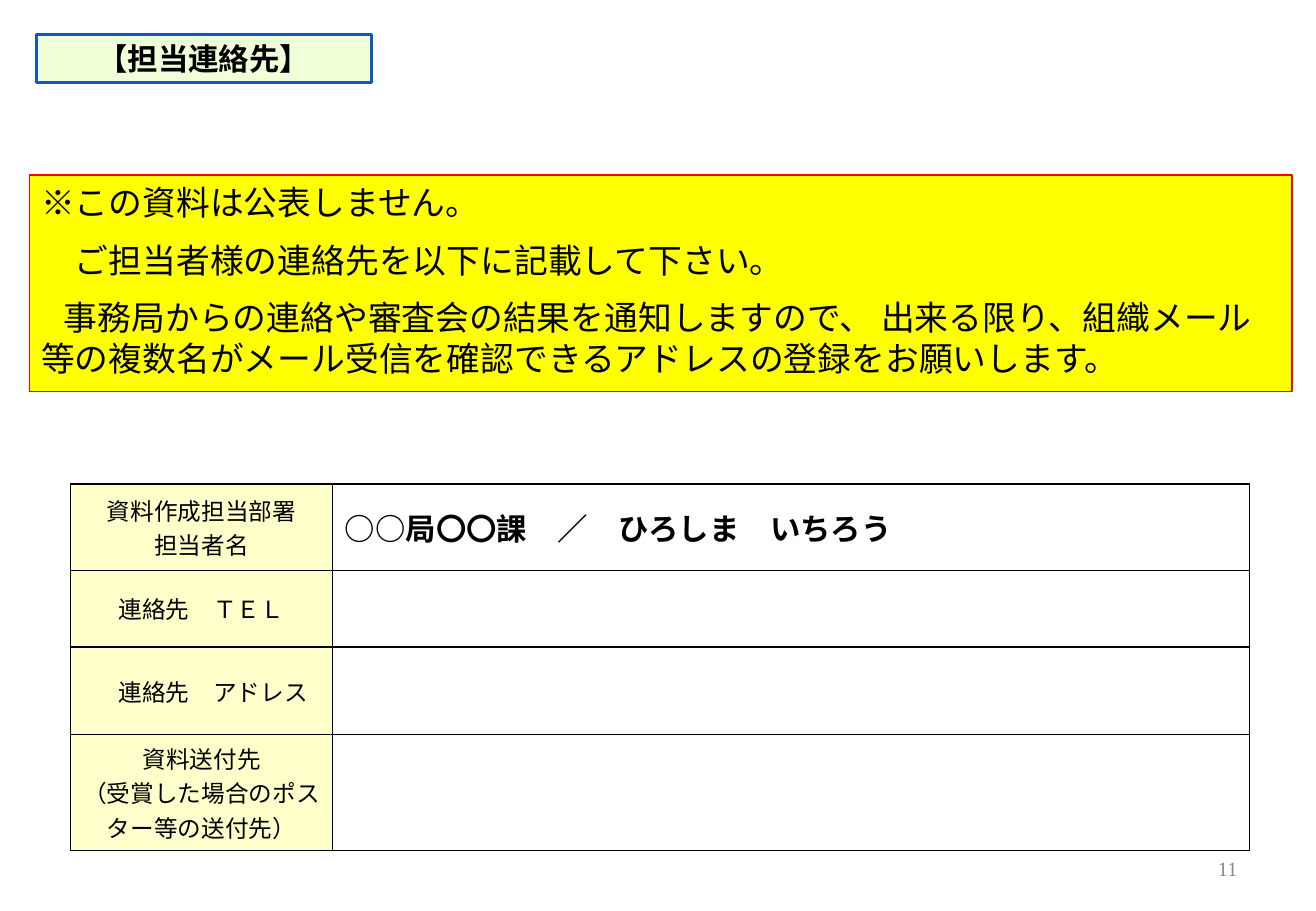
from lxml import etree
from pptx import Presentation
from pptx.dml.color import RGBColor
from pptx.enum.shapes import MSO_SHAPE as SHAPE
from pptx.enum.text import MSO_ANCHOR as ANCHOR, PP_ALIGN as ALIGN
from pptx.oxml import parse_xml
from pptx.oxml.ns import nsdecls, qn
from pptx.util import Pt

CJK, SERIF, LATO = "Noto Sans CJK JP", "Times New Roman", "Lato"
BLACK = "000000"


def color(hex_code):
    return RGBColor.from_string(hex_code)


def add_run(p, text, size, font, rgb=BLACK, bold=False):
    r = p.add_run()
    r.text = text
    f = r.font
    f.size, f.name, f.bold = Pt(size), font, bold
    f.color.rgb = color(rgb)
    ea = etree.SubElement(r._r.get_or_add_rPr(), qn("a:ea"))
    ea.set("typeface", CJK)


def place(sp, box):
    sp.left, sp.top, sp.width, sp.height = (Pt(v) for v in box)


def paint(sp, fill, line, width):
    sp.fill.solid()
    sp.fill.fore_color.rgb = color(fill)
    sp.line.color.rgb = color(line)
    sp.line.width = Pt(width)


def paragraphs(tf, count):
    return [tf.paragraphs[0]] + [tf.add_paragraph() for _ in range(count - 1)]


def add_heading(slide, box):
    """Title placeholder as a rounded label."""
    sp = slide.shapes.title
    place(sp, box)
    sp._element.spPr.find(qn("a:xfrm")).addnext(parse_xml(
        f'<a:prstGeom {nsdecls("a")} prst="roundRect"><a:avLst>'
        '<a:gd name="adj" fmla="val 30800"/></a:avLst></a:prstGeom>'))
    paint(sp, "F0FFD7", "0E58C4", 1.75)
    tf = sp.text_frame
    tf.vertical_anchor = ANCHOR.MIDDLE
    tf.margin_top = tf.margin_bottom = 0
    p = tf.paragraphs[0]
    p.alignment, p.line_spacing = ALIGN.CENTER, 1.0
    add_run(p, "【担当連絡先】", 18, "Arial", bold=True)


def add_notice(slide, box):
    """Yellow notice: (text, font, first-line indent) per paragraph."""
    lines = [
        ("※この資料は公表しません。", CJK, 0),
        ("　ご担当者様の連絡先を以下に記載して下さい。", CJK, 0),
        ("事務局からの連絡や審査会の結果を通知しますので、 出来る限り、組織メール"
         "等の複数名がメール受信を確認できるアドレスの登録をお願いします。", LATO, 13.5),
    ]
    sp = slide.shapes.add_shape(SHAPE.RECTANGLE, *(Pt(v) for v in box))
    sp.shadow.inherit = False
    paint(sp, "FFFF00", "FF0000", 0.75)
    tf = sp.text_frame
    tf.word_wrap = True
    tf.vertical_anchor = ANCHOR.TOP
    for p, (text, font, indent) in zip(paragraphs(tf, len(lines)), lines):
        p.alignment = ALIGN.LEFT
        p.line_spacing, p.space_after = Pt(24.3), Pt(10)
        p._p.get_or_add_pPr().set("indent", str(Pt(indent)))
        add_run(p, text, 20, font)


def add_borders(cell):
    tcPr = cell._tc.get_or_add_tcPr()
    for i, side in enumerate("LRTB"):
        tcPr.insert(i, parse_xml(
            f'<a:ln{side} {nsdecls("a")} w="{Pt(1)}"><a:solidFill>'
            f'<a:srgbClr val="{BLACK}"/></a:solidFill></a:ln{side}>'))


def add_contact_table(slide, box):
    """Contact form: labels on the left, entries on the right."""
    rows = [
        (51, ["資料作成担当部署", "担当者名"], SERIF, "○○局〇〇課　／　ひろしま　いちろう"),
        (45.5, ["連絡先　ＴＥＬ"], LATO, ""),
        (52, ["　連絡先　アドレス"], SERIF, ""),
        (68.5, ["資料送付先", "（受賞した場合のポスター等の送付先）"], SERIF, ""),
    ]
    label_width = 155.5
    left, top, width = box
    height = sum(row[0] for row in rows)
    tbl = slide.shapes.add_table(len(rows), 2, Pt(left), Pt(top), Pt(width), Pt(height)).table
    tbl.first_row = tbl.horz_banding = False
    tbl.columns[0].width = Pt(label_width)
    tbl.columns[1].width = Pt(width - label_width)
    for i, (row_height, labels, font, entry) in enumerate(rows):
        tbl.rows[i].height = Pt(row_height)
        label, value = tbl.cell(i, 0), tbl.cell(i, 1)
        for cell, fill in ((label, "FFFFCC"), (value, "FFFFFF")):
            cell.fill.solid()
            cell.fill.fore_color.rgb = color(fill)
            cell.vertical_anchor = ANCHOR.MIDDLE
            add_borders(cell)
        for p, text in zip(paragraphs(label.text_frame, len(labels)), labels):
            p.alignment = ALIGN.CENTER
            add_run(p, text, 14, font)
        if entry:
            add_run(value.text_frame.paragraphs[0], entry, 18, SERIF, bold=True)


def add_page_number(slide, box):
    tf = slide.shapes.add_textbox(*(Pt(v) for v in box)).text_frame
    tf.word_wrap = True
    tf.vertical_anchor = ANCHOR.MIDDLE
    p = tf.paragraphs[0]
    p.alignment = ALIGN.RIGHT
    add_run(p, "11", 12, SERIF, "898989")


def main():
    prs = Presentation()
    prs.slide_width, prs.slide_height = Pt(780), Pt(540)
    slide = prs.slides.add_slide(prs.slide_layouts[5])
    add_page_number(slide, (558.5, 500.5, 182, 29))
    add_contact_table(slide, (41.75, 287, 699))
    add_notice(slide, (17.25, 103.75, 748.5, 128.25))
    add_heading(slide, (21.5, 20.5, 198.5, 28.25))
    prs.save("out.pptx")


if __name__ == "__main__":
    main()
